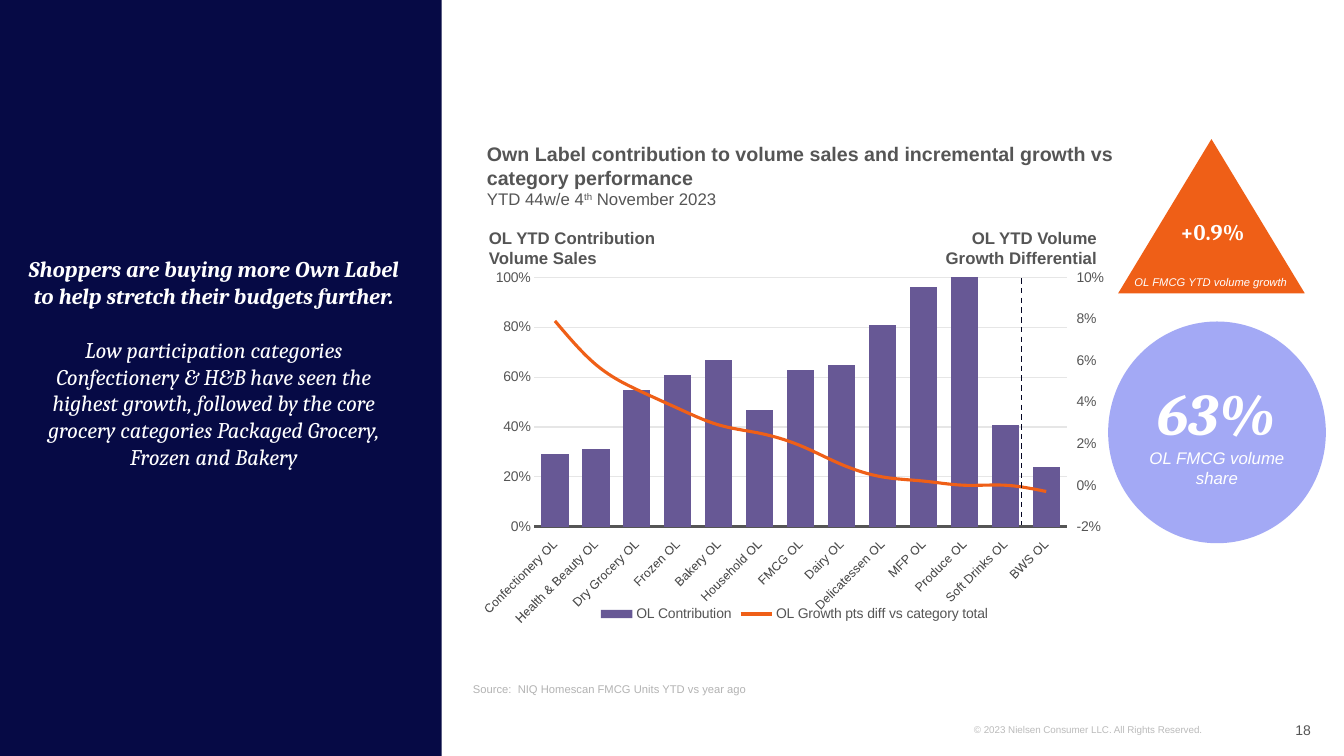
from pptx import Presentation
from pptx import util as u
from pptx.chart.data import CategoryChartData
from pptx.dml.color import RGBColor
from pptx.enum import chart as ch, dml, shapes, text
from pptx.oxml import parse_xml
from pptx.oxml.ns import nsdecls, qn

W, H = 13.33, 7.5
THEME = {
    "navy": "060A45", "violet": "675895", "lilac": "A3A9F5", "orange": "EF5F17",
    "white": "FFFFFF", "grey": "555555", "pale": "B3B3B3", "legal": "BBBBBB",
    "grid": "E6E6E6", "dash": "030522", "sans": "Arial", "serif": "Cambria",
    "huge": 42, "lead": 16, "head": 14, "label": 12, "axis": 10, "cat": 9,
    "note": 8, "tiny": 7,
}
CONTRIBUTION = {
    "Confectionery OL": (0.29, 0.079), "Health & Beauty OL": (0.31, 0.058),
    "Dry Grocery OL": (0.55, 0.046), "Frozen OL": (0.61, 0.037),
    "Bakery OL": (0.67, 0.029), "Household OL": (0.47, 0.025),
    "FMCG OL": (0.63, 0.019), "Dairy OL": (0.65, 0.01),
    "Delicatessen OL": (0.81, 0.004), "MFP OL": (0.96, 0.002),
    "Produce OL": (1, 0), "Soft Drinks OL": (0.41, 0), "BWS OL": (0.24, -0.003),
}
LEFT, CENTER, RIGHT = text.PP_ALIGN.LEFT, text.PP_ALIGN.CENTER, text.PP_ALIGN.RIGHT
TOP, MIDDLE, BOTTOM = text.MSO_ANCHOR.TOP, text.MSO_ANCHOR.MIDDLE, text.MSO_ANCHOR.BOTTOM


def rgb(name):
    """Return a theme colour."""
    return RGBColor.from_string(THEME[name])


def box(x, y, w, h):
    """Turn percentages of the slide into a left, top, width, height tuple."""
    return tuple(u.Inches(v * side / 100) for v, side in zip((x, y, w, h), (W, H, W, H)))


def style(font, size, color="grey", face="sans", bold=False, italic=False):
    """Apply theme values to a font."""
    values = {"name": THEME[face], "size": u.Pt(THEME[size]), "bold": bold, "italic": italic}
    for key, value in values.items():
        setattr(font, key, value)
    font.color.rgb = rgb(color)


def write(sp, paras, align=LEFT, anchor=TOP, inset=0.0, gap=0):
    """Fill a shape with paragraphs, each a (text, format) pair or a list of them."""
    tf = sp.text_frame
    values = {"word_wrap": True, "auto_size": text.MSO_AUTO_SIZE.NONE,
              "vertical_anchor": anchor, "margin_left": u.Inches(inset),
              "margin_right": u.Inches(inset), "margin_top": u.Inches(0.05),
              "margin_bottom": u.Inches(0.05)}
    for key, value in values.items():
        setattr(tf, key, value)
    for i, runs in enumerate(paras):
        p = tf.add_paragraph() if i else tf.paragraphs[0]
        pPr = p._p.get_or_add_pPr()
        pPr.set("marL", "0")
        pPr.set("indent", "0")
        pPr.append(parse_xml(f"<a:buNone {nsdecls('a')}/>"))
        p.alignment, p.space_before = align, u.Pt(gap if i else 0)
        for words, fmt, *raised in runs if isinstance(runs, list) else [runs]:
            r = p.add_run()
            r.text = words
            style(r.font, **fmt)
            if raised:
                r._r.get_or_add_rPr().set("baseline", "30000")


def textbox(s, area, paras, **kw):
    """Add a text box."""
    write(s.shapes.add_textbox(*box(*area)), paras, **kw)


def placeholder(sp, area, paras, **kw):
    """Move a placeholder and fill it."""
    sp.left, sp.top, sp.width, sp.height = box(*area)
    write(sp, paras, **kw)


def shape(s, kind, area, color):
    """Add a flat filled shape."""
    sp = s.shapes.add_shape(kind, *box(*area))
    sp.shadow.inherit = False
    sp.fill.solid()
    sp.fill.fore_color.rgb = rgb(color)
    sp.line.fill.background()
    return sp


def dashed_line(s, x, top, bottom):
    """Add a vertical dashed divider."""
    x, top, _, bottom = box(x, top, 0, bottom)
    ln = s.shapes.add_connector(shapes.MSO_CONNECTOR.STRAIGHT, x, top, x, bottom)
    ln.line.color.rgb = rgb("dash")
    ln.line.width, ln.line.dash_style = u.Pt(1), dml.MSO_LINE.DASH
    ln._element.spPr.append(parse_xml(f"<a:effectLst {nsdecls('a')}/>"))


def axis_text(size):
    """Return text properties for an axis written as XML."""
    return (f'<c:txPr><a:bodyPr/><a:p><a:pPr><a:defRPr sz="{THEME[size] * 100}"><a:solidFill>'
            f'<a:srgbClr val="{THEME["grey"]}"/></a:solidFill><a:latin typeface="{THEME["sans"]}"/>'
            '</a:defRPr></a:pPr><a:endParaRPr lang="en-GB"/></a:p></c:txPr>')


def move_to_line(chart):
    """Move the second series to a line on a right-hand axis."""
    bar = chart.element.xpath(".//c:barChart")[0]
    ser = bar.findall(qn("c:ser"))[1]
    for old in ser.findall(qn("c:invertIfNegative")):
        ser.remove(old)
    line = parse_xml(
        f'<c:lineChart {nsdecls("c")}><c:grouping val="standard"/><c:varyColors val="0"/>'
        '<c:marker val="1"/><c:axId val="301"/><c:axId val="302"/></c:lineChart>')
    line.insert(2, ser)
    bar.addnext(line)
    ns = nsdecls("c", "a")
    cat = (f'<c:catAx {ns}><c:axId val="301"/><c:scaling><c:orientation val="minMax"/></c:scaling>'
           '<c:delete val="1"/><c:axPos val="b"/><c:crossAx val="302"/></c:catAx>')
    val = (f'<c:valAx {ns}><c:axId val="302"/><c:scaling><c:orientation val="minMax"/>'
           '<c:max val="0.1"/><c:min val="-0.02"/></c:scaling><c:delete val="0"/>'
           '<c:axPos val="r"/><c:numFmt formatCode="0%" sourceLinked="0"/>'
           '<c:majorTickMark val="out"/><c:minorTickMark val="none"/><c:tickLblPos val="nextTo"/>'
           f'<c:spPr><a:ln><a:noFill/></a:ln></c:spPr>{axis_text("axis")}'
           '<c:crossAx val="301"/><c:crosses val="max"/><c:majorUnit val="0.02"/></c:valAx>')
    last = chart.element.xpath(".//c:valAx")[0]
    for xml in (val, cat):
        last.addnext(parse_xml(xml))


def contribution_chart(s, area):
    """Add columns for contribution and a smooth line for growth."""
    data = CategoryChartData()
    data.categories = list(CONTRIBUTION)
    names = "OL Contribution", "OL Growth pts diff vs category total"
    for name, values in zip(names, zip(*CONTRIBUTION.values())):
        data.add_series(name, values)
    chart = s.shapes.add_chart(ch.XL_CHART_TYPE.COLUMN_CLUSTERED, *box(*area), data).chart
    chart.has_title = False
    style(chart.font, "head")
    chart.has_legend = True
    chart.legend.position = ch.XL_LEGEND_POSITION.BOTTOM
    chart.legend.include_in_layout = True
    style(chart.legend.font, "axis")
    cat, val = chart.category_axis, chart.value_axis
    for axis, size in ((cat, "cat"), (val, "axis")):
        axis.major_tick_mark = ch.XL_TICK_MARK.NONE
        style(axis.tick_labels.font, size)
    cat.tick_label_position = ch.XL_TICK_LABEL_POSITION.LOW
    cat.format.line.color.rgb, cat.format.line.width = rgb("grey"), u.Pt(2)
    chart.element.xpath(".//c:catAx/c:txPr/a:bodyPr")[0].set("rot", "-2700000")
    val.minimum_scale, val.maximum_scale, val.major_unit = 0, 1, 0.2
    val.tick_labels.number_format, val.tick_labels.number_format_is_linked = "0%", False
    val.format.line.fill.background()
    val.major_gridlines.format.line.color.rgb = rgb("grid")
    val.major_gridlines.format.line.width = u.Pt(0.75)
    move_to_line(chart)
    columns, growth = chart.plots
    columns.gap_width, columns.overlap, columns.vary_by_categories = 50, 2, False
    columns.series[0].format.fill.solid()
    columns.series[0].format.fill.fore_color.rgb = rgb("violet")
    trend = growth.series[0]
    trend.format.line.color.rgb, trend.format.line.width = rgb("orange"), u.Pt(2.25)
    trend.marker.style, trend.smooth = ch.XL_MARKER_STYLE.NONE, True
    plot = chart.element.xpath(".//c:plotArea")[0]
    for old in plot.findall(qn("c:layout")):
        plot.remove(old)
    spots = "".join(f'<c:{k} val="{v}"/>' for k, v in (
        ("layoutTarget", "inner"), ("xMode", "edge"), ("yMode", "edge"),
        ("x", 0.08), ("y", 0.19), ("w", 0.86), ("h", 0.58)))
    plot.insert(0, parse_xml(
        f'<c:layout {nsdecls("c")}><c:manualLayout>{spots}</c:manualLayout></c:layout>'))


def main():
    """Build and save the slide."""
    prs = Presentation()
    prs.slide_width, prs.slide_height = u.Inches(W), u.Inches(H)
    s = prs.slides.add_slide(prs.slide_layouts[3])
    title, message, source = s.placeholders
    panel = shape(s, shapes.MSO_SHAPE.RECTANGLE, (0, 0, 32.86, 100), "navy")
    s.shapes._spTree.insert(2, panel._element)

    bold, plain = dict(size="head", bold=True), dict(size="label")
    placeholder(title, (36.23, 18.13, 48.39, 13.47), [
        ("Own Label contribution to volume sales and incremental growth vs category performance", bold),
        [("YTD 44w/e 4", plain), ("th", plain, True), (" November 2023", plain)]])
    lead = dict(size="lead", color="white", face="serif", italic=True)
    placeholder(message, (0.98, 33.07, 29.86, 40.8), [
        ("Shoppers are buying more Own Label to help stretch their budgets further.", lead | {"bold": True}),
        ("Low participation categories Confectionery & H&B have seen the highest growth, followed by "
         "the core grocery categories Packaged Grocery, Frozen and Bakery", lead)],
        align=CENTER, inset=0.1, gap=19.3)
    placeholder(source, (35.18, 87.33, 62.34, 5.33), [
        ("Source:\u00a0 NIQ Homescan FMCG Units YTD vs year ago".replace("\u00a0", " "),
         dict(size="note", color="pale"))], anchor=BOTTOM)

    contribution_chart(s, (35.78, 25.87, 46.36, 56.93))
    label = dict(size="label", bold=True)
    for x, w, align, lines in (
            (36.38, 14, LEFT, ("OL YTD Contribution", "Volume Sales")),
            (64.29, 17.33, RIGHT, ("OL YTD Volume", "Growth Differential"))):
        textbox(s, (x, 29.47, w, 6.67), [(line, label) for line in lines], align=align)
    dashed_line(s, 75.99, 36.8, 69.47)

    shape(s, shapes.MSO_SHAPE.ISOSCELES_TRIANGLE, (83.2, 18.4, 13.88, 20.4), "orange")
    white = dict(color="white", italic=True)
    textbox(s, (85.3, 28.13, 9.83, 4.93), [
        ("+0.9%", dict(size="lead", color="white", face="serif", bold=True))], align=CENTER)
    textbox(s, (83.42, 35.73, 13.35, 3.2), [
        ("OL FMCG YTD volume growth", white | {"size": "note"})], align=CENTER)
    share = shape(s, shapes.MSO_SHAPE.OVAL, (82.45, 42.53, 16.2, 29.33), "lilac")
    write(share, [("63%", white | dict(size="huge", face="serif", bold=True)),
                  ("OL FMCG volume share", white | {"size": "label"})],
          align=CENTER, anchor=MIDDLE, inset=0.05)

    textbox(s, (72.47, 95.07, 21.3, 2.93), [
        ("© 2023 Nielsen Consumer LLC. All Rights Reserved.", dict(size="tiny", color="legal"))])
    textbox(s, (90.1, 93.87, 7.43, 5.33), [("18", dict(size="axis"))], align=RIGHT, anchor=MIDDLE)


    prs.save("out.pptx")


if __name__ == "__main__":
    main()
